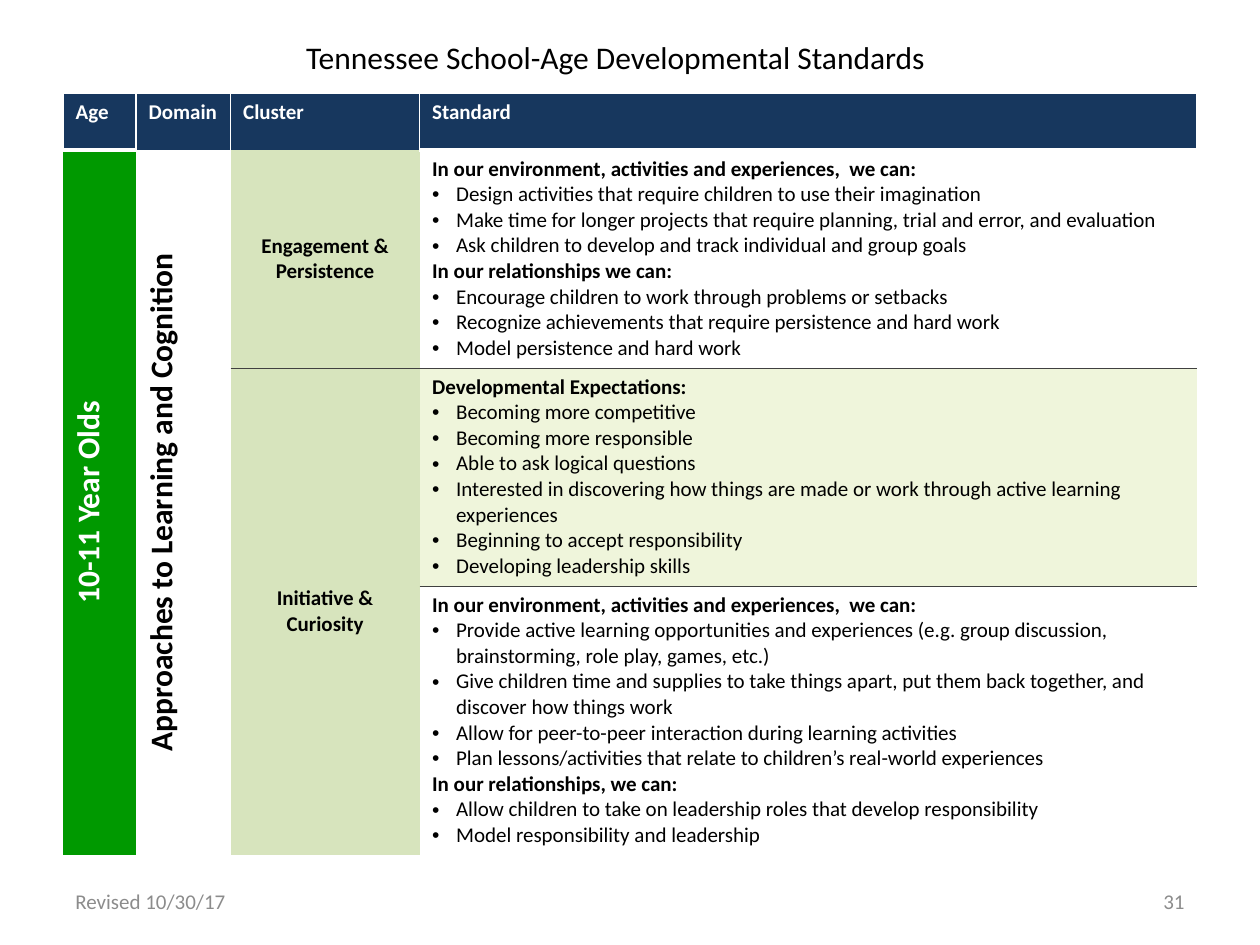
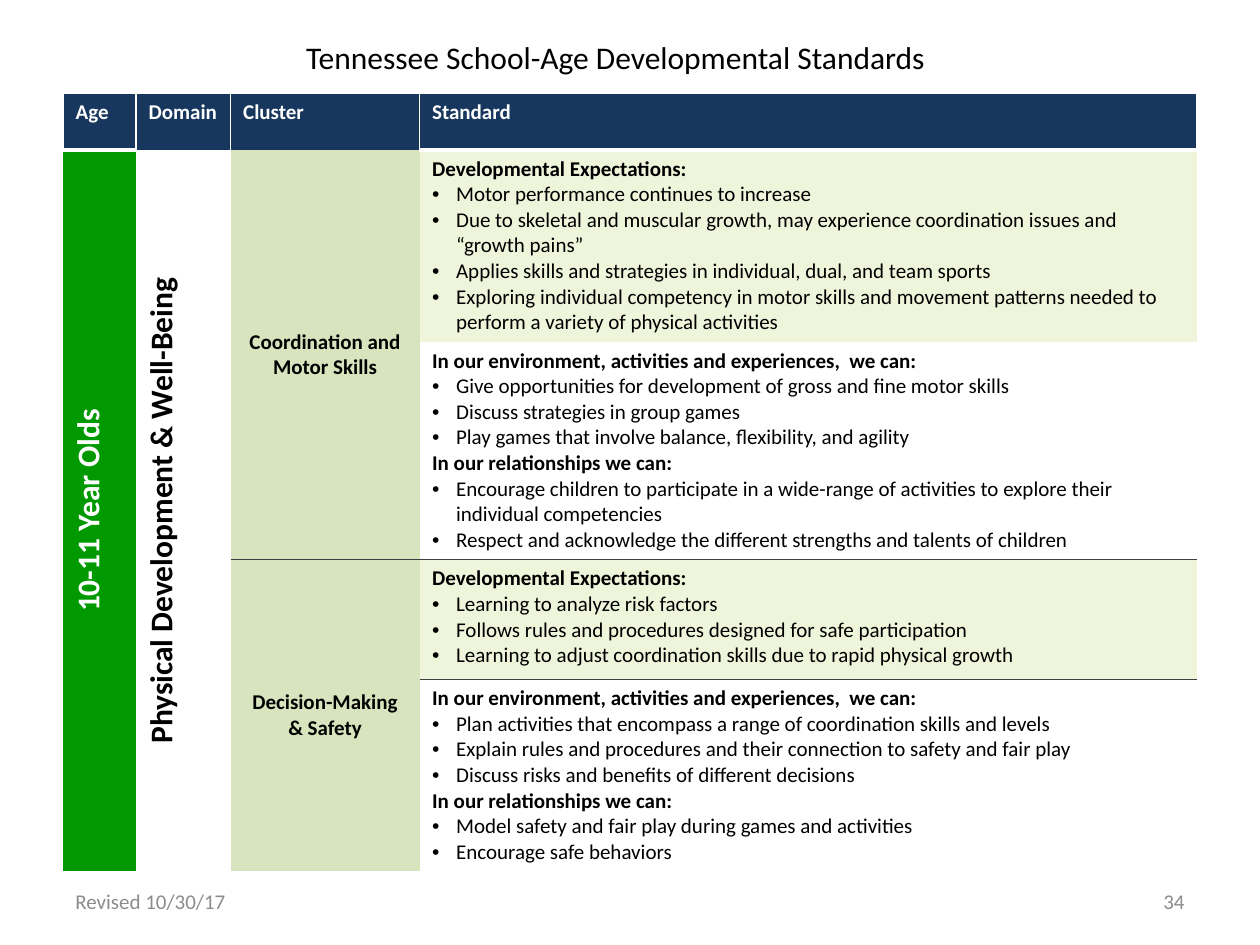
"""Build two slides of school-age developmental standards as tables."""
import lxml.etree
import pptx
import pptx.dml.color
import pptx.enum.text
import pptx.oxml.ns
import pptx.util

Inches = pptx.util.Inches
ALIGN = pptx.enum.text.PP_ALIGN
ANCHOR = pptx.enum.text.MSO_ANCHOR

COLORS = {
    "white": "FFFFFF", "black": "000000", "navy": "17375E", "green": "009900",
    "sage": "D7E4BD", "pale": "EFF5DB", "grey": "8C8C8C", "rule": "404040",
}
FONT = "Calibri"
TITLE = "Tennessee School-Age Developmental Standards"
HEADERS = ["Age", "Domain", "Cluster", "Standard"]
COLUMN_WIDTHS = [0.58, 0.75, 1.5, 6.17]
HEADER_HEIGHT = 0.45
EXPECTATIONS = "Developmental Expectations:"
ENVIRONMENT = "In our environment, activities and experiences,  we can:"
RELATIONSHIPS = "In our relationships we can:"
NO_GRID_STYLE = "{2D5ABB26-0587-4C30-8999-92F81FD0307C}"

PAGES = [
    {
        "number": "31",
        "domain": "Approaches to Learning and Cognition",
        "clusters": [
            ("Engagement & Persistence", [
                (1.73, [
                    ENVIRONMENT,
                    "Design activities that require children to use their imagination",
                    "Make time for longer projects that require planning, trial and error, and evaluation",
                    "Ask children to develop and track individual and group goals",
                    RELATIONSHIPS,
                    "Encourage children to work through problems or setbacks",
                    "Recognize achievements that require persistence and hard work",
                    "Model persistence and hard work",
                ]),
            ]),
            ("Initiative & Curiosity", [
                (1.73, [
                    EXPECTATIONS,
                    "Becoming more competitive",
                    "Becoming more responsible",
                    "Able to ask logical questions",
                    "Interested in discovering how things are made or work through active learning experiences",
                    "Beginning to accept responsibility",
                    "Developing leadership skills",
                ]),
                (2.13, [
                    ENVIRONMENT,
                    "Provide active learning opportunities and experiences (e.g. group discussion, "
                    "brainstorming, role play, games, etc.)",
                    "Give children time and supplies to take things apart, put them back together, "
                    "and discover how things work",
                    "Allow for peer-to-peer interaction during learning activities",
                    "Plan lessons/activities that relate to children’s real-world experiences",
                    "In our relationships, we can:",
                    "Allow children to take on leadership roles that develop responsibility",
                    "Model responsibility and leadership",
                ]),
            ]),
        ],
    },
    {
        "number": "34",
        "domain": "Physical Development & Well-Being",
        "clusters": [
            ("Coordination and Motor Skills", [
                (1.52, [
                    EXPECTATIONS,
                    "Motor performance continues to increase",
                    "Due to skeletal and muscular growth, may experience coordination issues and “growth pains”",
                    "Applies skills and strategies in individual, dual, and team sports",
                    "Exploring individual competency in motor skills and movement patterns needed to "
                    "perform a variety of physical activities",
                ]),
                (1.73, [
                    ENVIRONMENT,
                    "Give opportunities for development of gross and fine motor skills",
                    "Discuss strategies in group games",
                    "Play games that involve balance, flexibility, and agility",
                    RELATIONSHIPS,
                    "Encourage children to participate in a wide-range of activities to explore their "
                    "individual competencies",
                    "Respect and acknowledge the different strengths and talents of children",
                ]),
            ]),
            ("Decision-Making & Safety", [
                (0.95, [
                    EXPECTATIONS,
                    "Learning to analyze risk factors",
                    "Follows rules and procedures designed for safe participation",
                    "Learning to adjust coordination skills due to rapid physical growth",
                ]),
                (1.52, [
                    ENVIRONMENT,
                    "Plan activities that encompass a range of coordination skills and levels",
                    "Explain rules and procedures and their connection to safety and fair play",
                    "Discuss risks and benefits of different decisions",
                    RELATIONSHIPS,
                    "Model safety and fair play during games and activities",
                    "Encourage safe behaviors",
                ]),
            ]),
        ],
    },
]


class StandardsDeck:
    """Hold the presentation, its style and the current slide."""

    def __init__(self):
        self.presentation = pptx.Presentation()
        self.presentation.slide_width = Inches(10)
        self.presentation.slide_height = Inches(7.5)
        self.slide = None

    def color(self, name):
        return pptx.dml.color.RGBColor.from_string(COLORS[name])

    def format_paragraph(self, paragraph, size, color, bold=False, align=ALIGN.LEFT):
        paragraph.alignment = align
        for run in paragraph.runs:
            run.font.name = FONT
            run.font.size = pptx.util.Pt(size)
            run.font.bold = bold
            run.font.color.rgb = self.color(color)

    def add_title(self):
        self.slide = self.presentation.slides.add_slide(self.presentation.slide_layouts[5])
        title = self.slide.shapes.title
        title.left, title.top = Inches(2.33), Inches(0.25)
        title.width, title.height = Inches(5.33), Inches(0.4)
        title.text_frame.text = TITLE
        title.text_frame.vertical_anchor = ANCHOR.TOP
        title.text_frame.auto_size = pptx.enum.text.MSO_AUTO_SIZE.NONE
        self.format_paragraph(title.text_frame.paragraphs[0], 18, "black")

    def add_footer(self, left, text, align):
        box = self.slide.shapes.add_textbox(Inches(left), Inches(6.95), Inches(2.33), Inches(0.4))
        box.text_frame.word_wrap = True
        box.text_frame.vertical_anchor = ANCHOR.MIDDLE
        box.text_frame.text = text
        self.format_paragraph(box.text_frame.paragraphs[0], 12, "grey", align=align)

    def add_border(self, cell, side, color, width):
        properties = cell._tc.get_or_add_tcPr()
        line = lxml.etree.SubElement(properties, pptx.oxml.ns.qn("a:ln" + side), w=str(pptx.util.Pt(width)))
        fill = lxml.etree.SubElement(line, pptx.oxml.ns.qn("a:solidFill"))
        lxml.etree.SubElement(fill, pptx.oxml.ns.qn("a:srgbClr"), val=COLORS[color])

    def fill_cell(self, cell, fill, anchor=ANCHOR.TOP):
        cell.fill.solid()
        cell.fill.fore_color.rgb = self.color(fill)
        cell.vertical_anchor = anchor

    def write_label(self, cell, text, fill, color, size=12, align=ALIGN.CENTER,
                    anchor=ANCHOR.MIDDLE, vertical=False):
        self.fill_cell(cell, fill, anchor)
        cell.text_frame.text = text
        self.format_paragraph(cell.text_frame.paragraphs[0], size, color, True, align)
        if vertical:
            cell._tc.get_or_add_tcPr().set("vert", "vert270")

    def write_standard(self, cell, lines):
        self.fill_cell(cell, "pale" if lines[0] == EXPECTATIONS else "white")
        cell.text_frame.text = "\n".join(lines)
        for paragraph in cell.text_frame.paragraphs:
            heading = paragraph.text.endswith(":")
            self.format_paragraph(paragraph, 12, "black", heading)
            if not heading:
                self.add_bullet(paragraph)

    def add_bullet(self, paragraph):
        properties = paragraph._p.get_or_add_pPr()
        properties.set("marL", str(Inches(0.19)))
        properties.set("indent", str(Inches(-0.19)))
        lxml.etree.SubElement(properties, pptx.oxml.ns.qn("a:buFont"), typeface="Arial")
        lxml.etree.SubElement(properties, pptx.oxml.ns.qn("a:buChar"), char="•")

    def add_table(self, domain, clusters):
        heights = [HEADER_HEIGHT] + [height for _, rows in clusters for height, _ in rows]
        frame = self.slide.shapes.add_table(
            len(heights), len(HEADERS), Inches(0.5), Inches(0.74),
            Inches(sum(COLUMN_WIDTHS)), Inches(sum(heights)))
        table = frame.table
        frame._element.find(".//" + pptx.oxml.ns.qn("a:tableStyleId")).text = NO_GRID_STYLE
        for column, width in zip(table.columns, COLUMN_WIDTHS):
            column.width = Inches(width)
        for row, height in zip(table.rows, heights):
            row.height = Inches(height)

        for column, header in enumerate(HEADERS):
            cell = table.cell(0, column)
            for side in "LRT":
                self.add_border(cell, side, "white", 1)
            if header in ("Age", "Standard"):
                self.add_border(cell, "B", "white", 3)
            self.write_label(cell, header, "navy", "white", align=ALIGN.LEFT, anchor=ANCHOR.TOP)

        last = len(heights) - 1
        for column in (0, 1):
            table.cell(1, column).merge(table.cell(last, column))
        self.write_label(table.cell(1, 0), "10-11 Year Olds", "green", "white", 18,
                         anchor=ANCHOR.TOP, vertical=True)
        self.write_label(table.cell(1, 1), domain, "white", "black", 18, vertical=True)

        first = 1
        for name, rows in clusters:
            if len(rows) > 1:
                table.cell(first, 2).merge(table.cell(first + len(rows) - 1, 2))
            if first > 1:
                for column in (2, 3):
                    self.add_border(table.cell(first, column), "T", "rule", 0.5)
            self.write_label(table.cell(first, 2), name, "sage", "black")
            for offset, (_, lines) in enumerate(rows):
                self.write_standard(table.cell(first + offset, 3), lines)
            first += len(rows)

    def add_page(self, page):
        self.add_title()
        self.add_table(page["domain"], page["clusters"])
        self.add_footer(0.5, "Revised 10/30/17", ALIGN.LEFT)
        self.add_footer(7.17, page["number"], ALIGN.RIGHT)


def main():
    deck = StandardsDeck()
    for page in PAGES:
        deck.add_page(page)
    deck.presentation.save("out.pptx")


if __name__ == "__main__":
    main()
